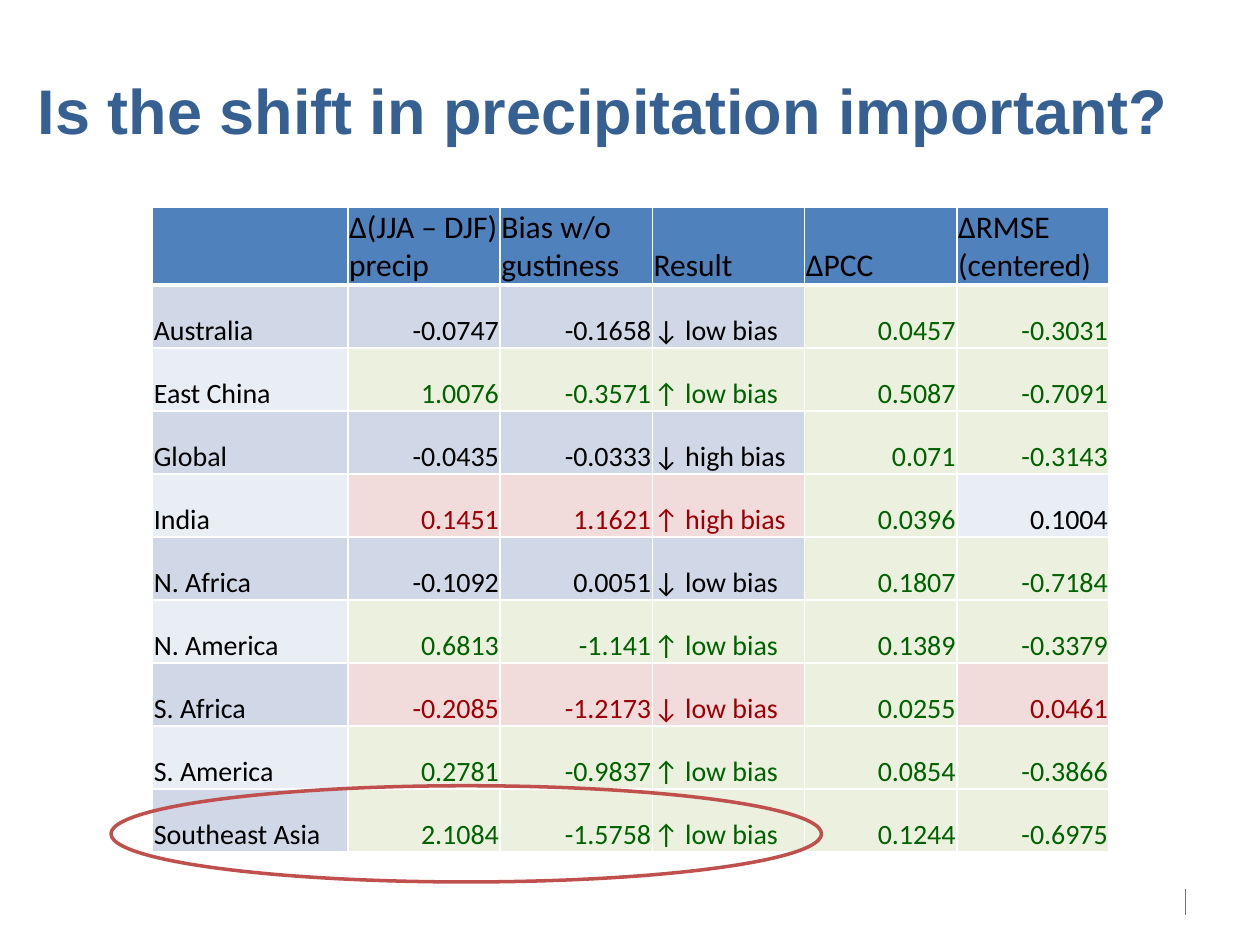
from dataclasses import dataclass
from enum import Enum

from lxml.etree import SubElement
from pptx import Presentation
from pptx.dml.color import RGBColor
from pptx.enum.shapes import MSO_CONNECTOR, MSO_SHAPE
from pptx.enum.text import MSO_ANCHOR, MSO_AUTO_SIZE, PP_ALIGN
from pptx.oxml.ns import qn
from pptx.util import Pt

BLACK = RGBColor(0x00, 0x00, 0x00)
WHITE = RGBColor(0xFF, 0xFF, 0xFF)
NAVY = RGBColor(0x37, 0x60, 0x92)
BLUE = RGBColor(0x4F, 0x81, 0xBD)
BANDS = (RGBColor(0xD0, 0xD8, 0xE8), RGBColor(0xE9, 0xED, 0xF4))
GREEN = RGBColor(0x00, 0x61, 0x00)
MINT = RGBColor(0xEB, 0xF1, 0xDE)
RED = RGBColor(0x9C, 0x00, 0x06)
PINK = RGBColor(0xF2, 0xDC, 0xDB)
BRICK = RGBColor(0xC0, 0x50, 0x4D)
GRAY = RGBColor(0x70, 0x72, 0x76)


class Tone(Enum):
    PLAIN = 0
    GOOD = 1
    BAD = 2


@dataclass
class Region:
    name: str
    shift: str
    bias: str
    result: str
    pcc: str
    rmse: str
    lead: Tone
    fit: Tone = Tone.GOOD


HEADS = ("", "Δ(JJA – DJF) precip", "Bias w/o gustiness", "Result",
         "ΔPCC", "ΔRMSE (centered)")
REGIONS = (
    Region("Australia", "-0.0747", "-0.1658", "↓ low bias", "0.0457", "-0.3031", Tone.PLAIN),
    Region("East China", "1.0076", "-0.3571", "↑ low bias", "0.5087", "-0.7091", Tone.GOOD),
    Region("Global", "-0.0435", "-0.0333", "↓ high bias", "0.071", "-0.3143", Tone.PLAIN),
    Region("India", "0.1451", "1.1621", "↑ high bias", "0.0396", "0.1004", Tone.BAD, Tone.PLAIN),
    Region("N. Africa", "-0.1092", "0.0051", "↓ low bias", "0.1807", "-0.7184", Tone.PLAIN),
    Region("N. America", "0.6813", "-1.141", "↑ low bias", "0.1389", "-0.3379", Tone.GOOD),
    Region("S. Africa", "-0.2085", "-1.2173", "↓ low bias", "0.0255", "0.0461", Tone.BAD, Tone.BAD),
    Region("S. America", "0.2781", "-0.9837", "↑ low bias", "0.0854", "-0.3866", Tone.GOOD),
    Region("Southeast Asia", "2.1084", "-1.5758", "↑ low bias", "0.1244", "-0.6975", Tone.GOOD),
)


def add_edges(cell, base: float) -> None:
    props = cell._tc.get_or_add_tcPr()
    for tag, width in (("a:lnL", 1), ("a:lnR", 1), ("a:lnT", 1), ("a:lnB", base)):
        edge = SubElement(props, qn(tag), w=str(Pt(width)))
        fill = SubElement(edge, qn("a:solidFill"))
        SubElement(fill, qn("a:srgbClr"), val=str(WHITE))


def fill_cell(cell, text: str, size: float, ink: RGBColor, back: RGBColor,
              align: PP_ALIGN = PP_ALIGN.LEFT, base: float = 1) -> None:
    add_edges(cell, base)
    cell.fill.solid()
    cell.fill.fore_color.rgb = back
    cell.margin_left = cell.margin_right = cell.margin_top = Pt(0.75)
    cell.margin_bottom = Pt(0)
    cell.vertical_anchor = MSO_ANCHOR.BOTTOM
    cell.text_frame.text = text
    para = cell.text_frame.paragraphs[0]
    para.alignment = align
    para.font.size = Pt(size)
    for run in para.runs:
        run.font.name = "Calibri"
        run.font.size = Pt(size)
        run.font.bold = False
        run.font.color.rgb = ink


def fill_row(table, row: int, region: Region) -> None:
    band = BANDS[(row - 1) % 2]
    looks = {Tone.PLAIN: (BLACK, band), Tone.GOOD: (GREEN, MINT), Tone.BAD: (RED, PINK)}
    right, left = PP_ALIGN.RIGHT, PP_ALIGN.LEFT
    items = (
        (region.name, Tone.PLAIN, left),
        (region.shift, region.lead, right),
        (region.bias, region.lead, right),
        (region.result, region.lead, left),
        (region.pcc, Tone.GOOD, right),
        (region.rmse, region.fit, right),
    )
    for col, (text, tone, align) in enumerate(items):
        fill_cell(table.cell(row, col), text, 16, *looks[tone], align)


def add_grid(slide) -> None:
    table = slide.shapes.add_table(len(REGIONS) + 1, len(HEADS), Pt(87.2), Pt(118.2),
                                   Pt(546.6), Pt(361.4)).table
    table.horz_banding = False
    for col, head in enumerate(HEADS):
        table.columns[col].width = Pt(87) if col else Pt(111.6)
        fill_cell(table.cell(0, col), head, 18, BLACK, BLUE, base=3)
    table.rows[0].height = Pt(37.4)
    for row, region in enumerate(REGIONS, 1):
        table.rows[row].height = Pt(36)
        fill_row(table, row, region)


def add_title(slide) -> None:
    title = slide.shapes.title
    title.left, title.top, title.width, title.height = Pt(21.6), Pt(15.8), Pt(689), Pt(68.4)
    frame = title.text_frame
    frame.text = "Is the shift in precipitation important?"
    frame.auto_size = MSO_AUTO_SIZE.NONE
    frame.word_wrap = True
    frame.vertical_anchor = MSO_ANCHOR.BOTTOM
    frame.margin_left = frame.margin_right = frame.margin_top = frame.margin_bottom = Pt(0)
    para = frame.paragraphs[0]
    para.alignment = PP_ALIGN.LEFT
    font = para.runs[0].font
    font.name = "Arial"
    font.size = Pt(36)
    font.bold = True
    font.color.rgb = NAVY


def add_mark(slide) -> None:
    mark = slide.shapes.add_connector(MSO_CONNECTOR.STRAIGHT, Pt(677.5), Pt(508.3),
                                      Pt(677.5), Pt(522.7))
    mark.line.color.rgb = GRAY
    mark.line.width = Pt(1)
    SubElement(mark._element.spPr, qn("a:effectLst"))


def add_ring(slide) -> None:
    ring = slide.shapes.add_shape(MSO_SHAPE.OVAL, Pt(63.4), Pt(449), Pt(406), Pt(55))
    ring.shadow.inherit = False
    ring.fill.background()
    ring.line.color.rgb = BRICK
    ring.line.width = Pt(2)


def main() -> None:
    deck = Presentation()
    deck.slide_width, deck.slide_height = Pt(720), Pt(540)
    slide = deck.slides.add_slide(deck.slide_layouts[5])
    add_mark(slide)
    add_title(slide)
    add_grid(slide)
    add_ring(slide)
    deck.save("out.pptx")


if __name__ == "__main__":
    main()
